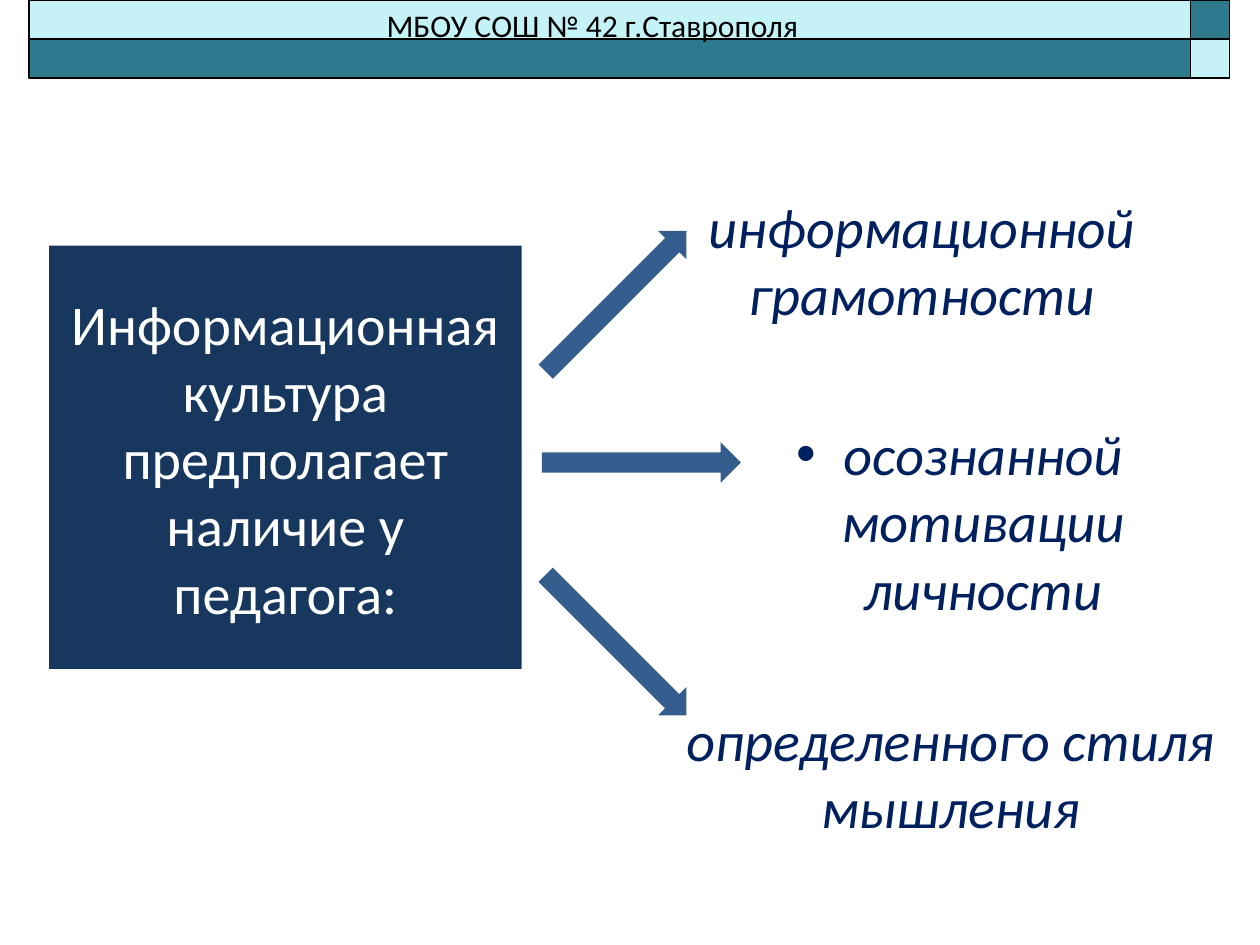
"""Builds a slide on the three parts of a teacher's information culture."""
import pptx
import pptx.dml.color
import pptx.enum.shapes
import pptx.enum.text
import pptx.util
from lxml import etree
from pptx.oxml.ns import qn

Inches = pptx.util.Inches
RGBColor = pptx.dml.color.RGBColor
Shapes = pptx.enum.shapes.MSO_SHAPE
Align = pptx.enum.text.PP_ALIGN

NAVY = RGBColor(0x17, 0x37, 0x5E)
INK = RGBColor(0x00, 0x20, 0x60)
ARROW_BLUE = RGBColor(0x34, 0x5C, 0x8C)
PALE_AQUA = RGBColor(0xC5, 0xF2, 0xF7)
TEAL = RGBColor(0x2C, 0x7A, 0x8C)
WHITE = RGBColor(0xFF, 0xFF, 0xFF)
BLACK = RGBColor(0x00, 0x00, 0x00)


def place(part, left, top, width, height):
    part.left, part.top = Inches(left), Inches(top)
    part.width, part.height = Inches(width), Inches(height)


def write(part, wording, size, color, align, italic=False):
    frame = part.text_frame
    frame.word_wrap = True
    frame.auto_size = pptx.enum.text.MSO_AUTO_SIZE.NONE
    frame.text = wording
    paragraph = frame.paragraphs[0]
    paragraph.alignment = align
    paragraph.space_before = pptx.util.Pt(0)
    paragraph.font.name = "Calibri"
    paragraph.font.size = pptx.util.Pt(size)
    paragraph.font.italic = italic
    paragraph.font.color.rgb = color


deck = pptx.Presentation()
deck.slide_width, deck.slide_height = Inches(10), Inches(7.5)
slide = deck.slides.add_slide(deck.slide_layouts[1])

motivation = slide.placeholders[1]
place(motivation, 5.23, 3.28, 4.77, 1.72)
motivation.text_frame.text = ""
properties = motivation.text_frame.paragraphs[0]._p.get_or_add_pPr()
properties.set("marL", "0")
properties.set("indent", "0")
etree.SubElement(properties, qn("a:buNone"))
write(motivation, "осознанной мотивации личности", 32, INK, Align.CENTER, True)

thesis = slide.shapes.title
place(thesis, 0.39, 1.95, 3.75, 3.36)
thesis.fill.solid()
thesis.fill.fore_color.rgb = NAVY
write(thesis, "Информационная культура предполагает наличие у педагога:",
      32, WHITE, Align.CENTER)
thesis.text_frame.vertical_anchor = pptx.enum.text.MSO_ANCHOR.MIDDLE

header = slide.shapes.add_group_shape()
band = 0.31
for left, width, colors in [(0.23, 9.53, (PALE_AQUA, TEAL)),
                            (9.45, band, (TEAL, PALE_AQUA))]:
    for row, color in enumerate(colors):
        bar = header.shapes.add_shape(
            Shapes.RECTANGLE, Inches(left), Inches(row * band),
            Inches(width), Inches(band))
        bar.shadow.inherit = False
        bar.fill.solid()
        bar.fill.fore_color.rgb = color
        bar.line.color.rgb = BLACK
        bar.line.width = pptx.util.Pt(0.75)
school = header.shapes.add_textbox(
    Inches(2.97), Inches(0), Inches(3.83), Inches(0.4))
write(school, "МБОУ СОШ № 42 г.Ставрополя", 18, BLACK, Align.LEFT)

for wording, left, top in [("информационной грамотности", 5.08, 1.48),
                           ("определенного стиля мышления", 5.31, 5.55)]:
    quality = slide.shapes.add_textbox(
        Inches(left), Inches(top), Inches(4.47), Inches(1.17))
    write(quality, wording, 32, INK, Align.CENTER, True)

for left, top, angle in [(4.93, 2.88, 270), (4.73, 4.33, 315), (4.73, 1.6, 225)]:
    arrow = slide.shapes.add_shape(
        Shapes.DOWN_ARROW, Inches(left), Inches(top), Inches(0.32), Inches(1.58))
    arrow.rotation = angle
    arrow.shadow.inherit = False
    arrow.fill.solid()
    arrow.fill.fore_color.rgb = ARROW_BLUE
    arrow.line.fill.background()

deck.save("out.pptx")
